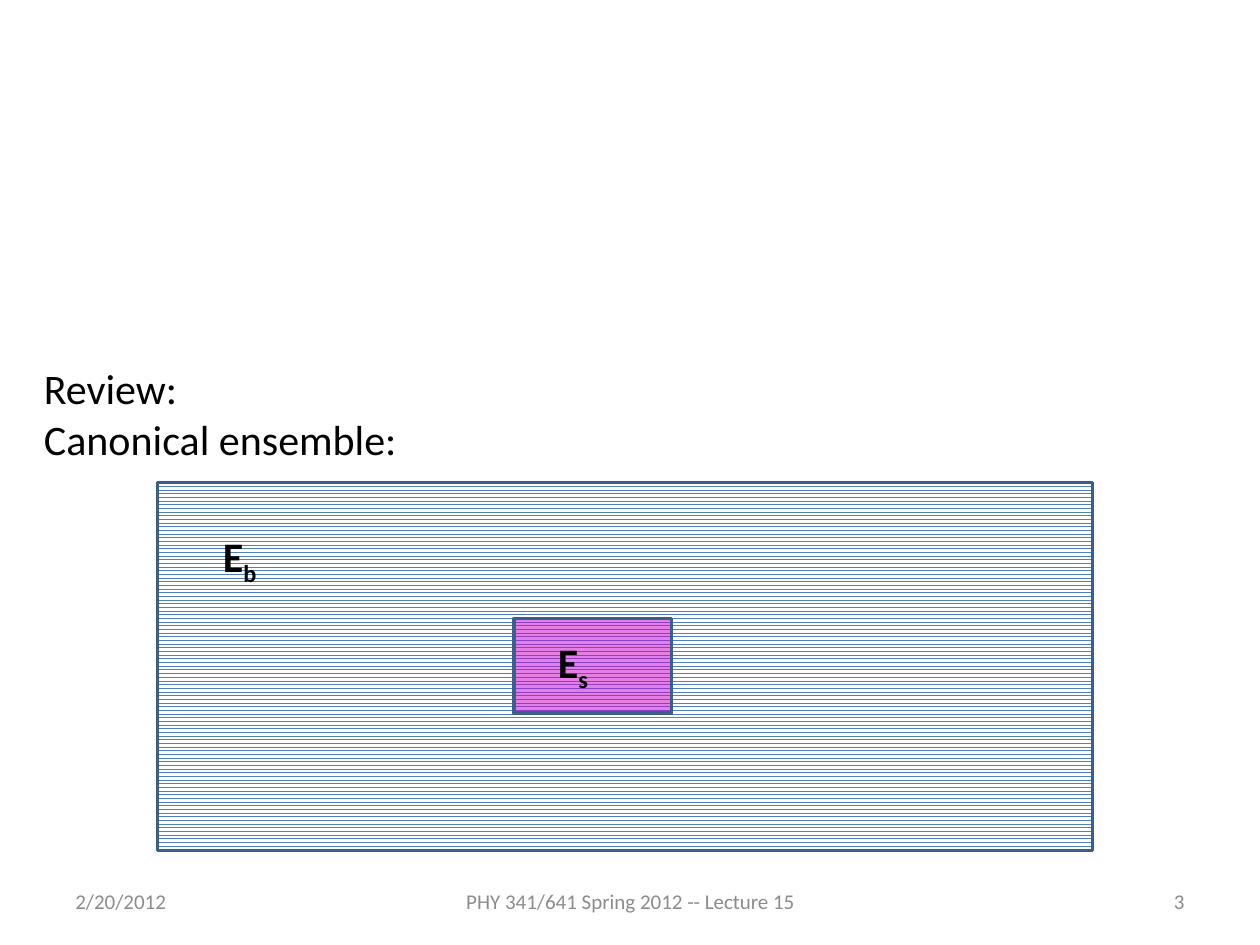
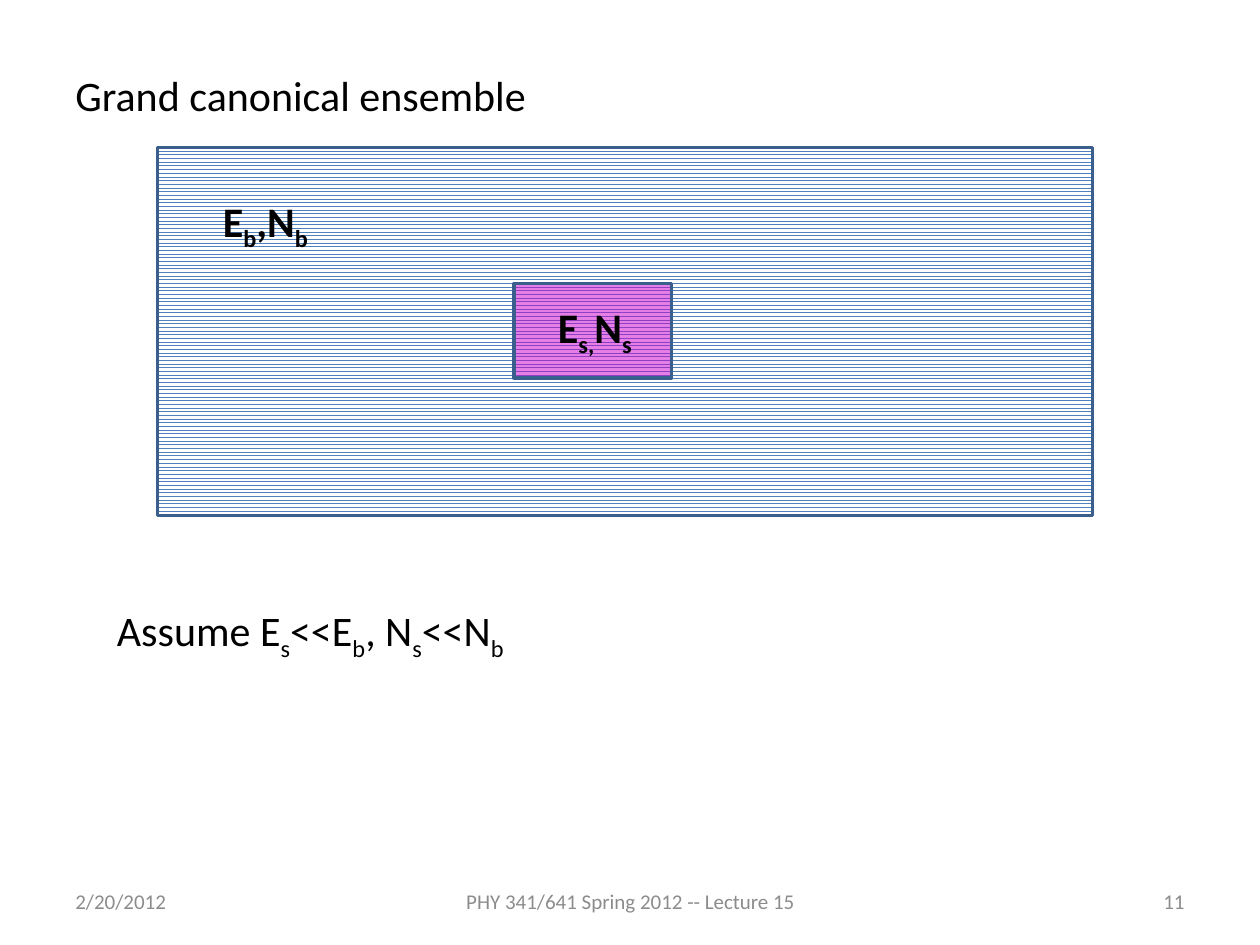
from pptx import Presentation
from pptx.dml.color import RGBColor
from pptx.enum.dml import MSO_PATTERN
from pptx.enum.shapes import MSO_SHAPE
from pptx.enum.text import MSO_ANCHOR as Anchor, MSO_AUTO_SIZE as AutoSize, PP_ALIGN as Align
from pptx.oxml.ns import qn
from pptx.oxml.xmlchemy import OxmlElement
from pptx.util import Inches, Pt

COLORS = {
    "text": "000000",
    "footer": "8C8C8C",
    "bath": "4F81BD",
    "paper": "FFFFFF",
    "system": "CC00CC",
    "outline": "3A5F8C",
}
FONT = "Calibri"
DATE = "2/20/2012"
COURSE = "PHY 341/641 Spring 2012 -- Lecture 15"


def color(name):
    """Return the palette colour with this name."""
    return RGBColor.from_string(COLORS[name])


def add_text(shapes, place, lines, size=24, ink="text", bold=False,
             align=Align.LEFT, anchor=Anchor.TOP, grow=True):
    """Add a text box; in each line every second part between bars is a subscript."""
    box = shapes.add_textbox(*map(Inches, place))
    frame = box.text_frame
    frame.word_wrap = True
    frame.auto_size = AutoSize.SHAPE_TO_FIT_TEXT if grow else AutoSize.NONE
    frame.vertical_anchor = anchor
    for number, line in enumerate(lines):
        para = frame.add_paragraph() if number else frame.paragraphs[0]
        para.alignment = align
        para.font.name = FONT
        para.font.size = Pt(size)
        para.font.bold = bold
        para.font.color.rgb = color(ink)
        for index, part in enumerate(line.split("|")):
            if part:
                span = para.add_run()
                span.text = part
                if index % 2:
                    span._r.get_or_add_rPr().set("baseline", "-25000")


def add_rectangle(shapes, place):
    """Add an outlined rectangle without a shadow and return it."""
    box = shapes.add_shape(MSO_SHAPE.RECTANGLE, *map(Inches, place))
    box.shadow.inherit = False
    box.line.color.rgb = color("outline")
    box.line.width = Pt(2)
    return box


def add_bath(shapes, top):
    """Add the zigzag rectangle that stands for the heat bath."""
    bath = add_rectangle(shapes, (1.25, top, 7.42, 2.92))
    bath.fill.patterned()
    bath.fill.pattern = MSO_PATTERN.ZIG_ZAG
    bath.fill.fore_color.rgb = color("bath")
    bath.fill.back_color.rgb = color("paper")


def add_system(shapes, top):
    """Add the half-transparent rectangle that stands for the system."""
    system = add_rectangle(shapes, (4.08, top, 1.25, 0.75))
    system.fill.solid()
    system.fill.fore_color.rgb = color("system")
    alpha = OxmlElement("a:alpha")
    alpha.set("val", "50000")
    system._element.spPr.find(qn("a:solidFill"))[0].append(alpha)


def add_ensemble(shapes, top, bath_label, system_label):
    """Draw a labelled system inside its labelled bath."""
    add_bath(shapes, top)
    add_system(shapes, top + 1.08)
    add_text(shapes, (1.67, top + 0.33, 1.17, 0.5), [bath_label], bold=True)
    add_text(shapes, (4.33, top + 1.17, 0.92, 0.5), [system_label], bold=True)


def add_page(deck, number):
    """Add a blank page with its date, course and page number."""
    page = deck.slides.add_slide(deck.slide_layouts[6])
    footers = (
        (0.5, 2.33, DATE, Align.LEFT),
        (3.42, 3.17, COURSE, Align.CENTER),
        (7.17, 2.33, str(number), Align.RIGHT),
    )
    for left, width, words, align in footers:
        add_text(page.shapes, (left, 6.95, width, 0.4), [words], size=12,
                 ink="footer", align=align, anchor=Anchor.MIDDLE, grow=False)
    return page


def add_canonical_page(deck):
    """Add the review of the canonical ensemble."""
    page = add_page(deck, 3)
    add_text(page.shapes, (0.25, 2.83, 8.58, 0.91), ["Review:", "Canonical ensemble:"])
    add_ensemble(page.shapes, 3.83, "E|b", "E|s")


def add_grand_canonical_page(deck):
    """Add the grand canonical ensemble and its assumption."""
    page = add_page(deck, 11)
    add_text(page.shapes, (0.5, 0.5, 8.92, 0.5), ["Grand canonical ensemble"])
    group = page.shapes.add_group_shape()
    add_ensemble(group.shapes, 1.17, "E|b|,N|b", "E|s,|N|s")
    add_text(page.shapes, (0.83, 4.75, 7.83, 0.5), ["Assume E|s|<<E|b|, N|s|<<N|b"])


def main():
    """Build and save the deck."""
    deck = Presentation()
    deck.slide_width = Inches(10)
    deck.slide_height = Inches(7.5)
    add_canonical_page(deck)
    add_grand_canonical_page(deck)
    deck.save("out.pptx")


if __name__ == "__main__":
    main()
